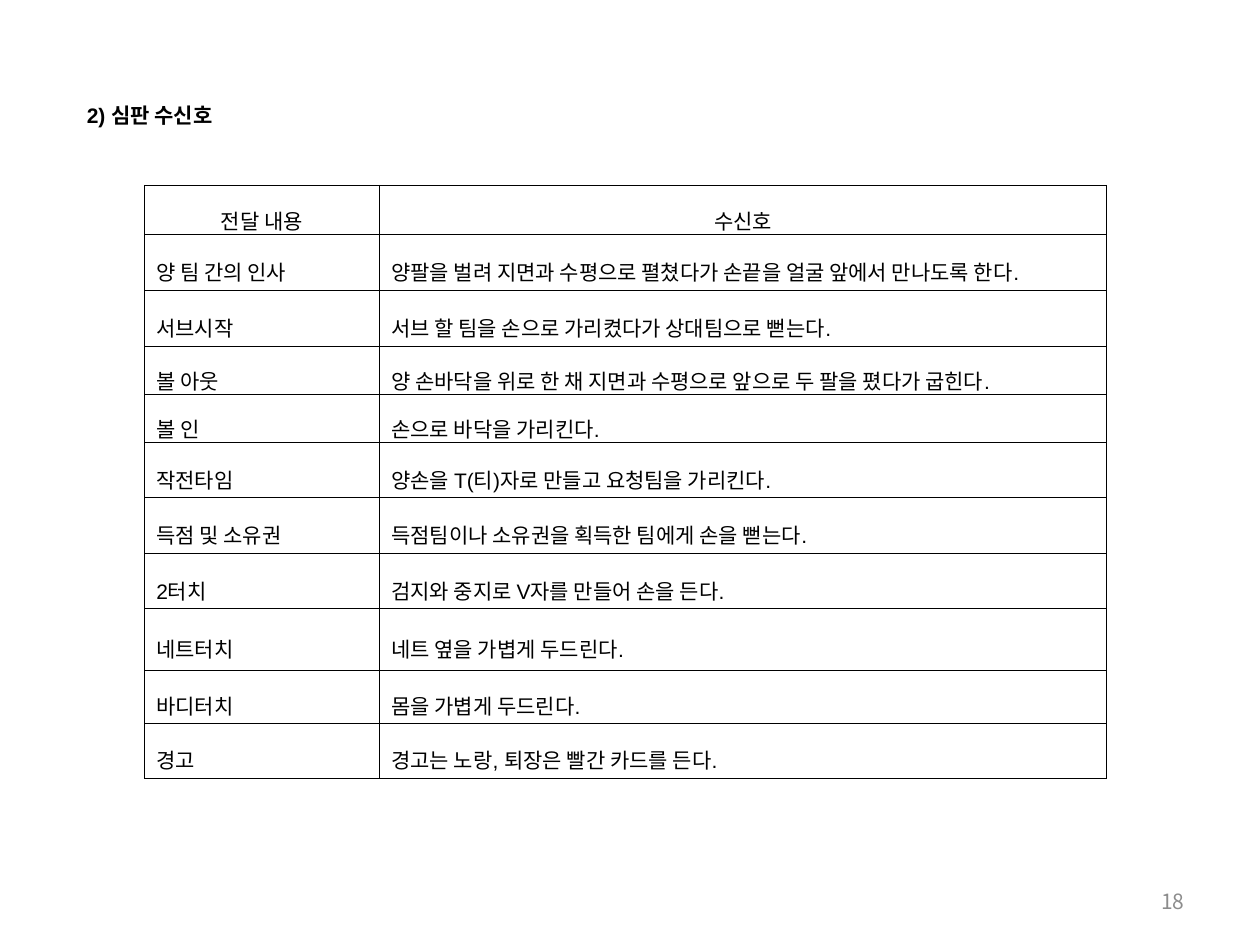
from dataclasses import dataclass

from lxml import etree
from pptx import Presentation
from pptx import util as u
from pptx.dml import color
from pptx.enum import text
from pptx.oxml import ns


@dataclass(frozen=True)
class Theme:
    """Fonts, type size, colours and line width of the slide."""
    font: str = "Arial"
    number_font: str = "Noto Sans CJK KR"
    size: int = 12
    ink: str = "000000"
    muted: str = "8C8C8C"
    border: float = 0.28
    leading: float = 1.6


THEME = Theme()
HEADER = ("전달 내용", "수신호")
SIGNALS = [
    ("양 팀 간의 인사", "양팔을 벌려 지면과 수평으로 펼쳤다가 손끝을 얼굴 앞에서 만나도록 한다.", 1.12),
    ("서브시작", "서브 할 팀을 손으로 가리켰다가 상대팀으로 뻗는다.", 1.12),
    ("볼 아웃", "양 손바닥을 위로 한 채 지면과 수평으로 앞으로 두 팔을 폈다가 굽힌다.", 0.97),
    ("볼 인", "손으로 바닥을 가리킨다.", 0.97),
    ("작전타임", "양손을 T(티)자로 만들고 요청팀을 가리킨다.", 1.12),
    ("득점 및 소유권", "득점팀이나 소유권을 획득한 팀에게 손을 뻗는다.", 1.12),
    ("2터치", "검지와 중지로 V자를 만들어 손을 든다.", 1.12),
    ("네트터치", "네트 옆을 가볍게 두드린다.", 1.24),
    ("바디터치", "몸을 가볍게 두드린다.", 1.06),
    ("경고", "경고는 노랑, 퇴장은 빨간 카드를 든다.", 1.12),
]


def add_run(p, words, font=THEME.font, ink=THEME.ink, bold=False):
    """Add one styled run to a paragraph."""
    r = p.add_run()
    r.text = words
    r.font.name, r.font.size, r.font.bold = font, u.Pt(THEME.size), bold
    r.font.color.rgb = color.RGBColor.from_string(ink)


def add_label(s, box, words, align, **style):
    """Add a one-line text box."""
    sp = s.shapes.add_textbox(*map(u.Cm, box))
    tf = sp.text_frame
    tf.word_wrap = True
    tf.vertical_anchor = text.MSO_ANCHOR.MIDDLE
    p = tf.paragraphs[0]
    p.alignment = align
    add_run(p, words, **style)


def add_borders(cell):
    """Draw a thin line on all four sides of a cell."""
    tc_pr = cell._tc.get_or_add_tcPr()
    for side in ("a:lnL", "a:lnR", "a:lnT", "a:lnB"):
        ln = etree.SubElement(tc_pr, ns.qn(side), w=str(u.Pt(THEME.border)))
        fill = etree.SubElement(ln, ns.qn("a:solidFill"))
        etree.SubElement(fill, ns.qn("a:srgbClr"), val=THEME.ink)


def fill_cell(cell, words, align, indent):
    """Put text, margins and borders into a table cell."""
    cell.margin_left, cell.margin_right = u.Cm(indent), u.Cm(0.13)
    cell.margin_top = cell.margin_bottom = u.Cm(0.03)
    cell.vertical_anchor = text.MSO_ANCHOR.MIDDLE
    add_borders(cell)
    cell.fill.background()
    p = cell.text_frame.paragraphs[0]
    p.alignment, p.line_spacing = align, THEME.leading
    add_run(p, words)


def add_signal_table(s):
    """Add the table of referee hand signals."""
    rows = [(*HEADER, 1.0), *SIGNALS]
    widths = (4.74, 14.66)
    height = sum(row[-1] for row in rows)
    frame = s.shapes.add_table(len(rows), len(widths), u.Cm(2.91), u.Cm(3.73),
                               u.Cm(sum(widths)), u.Cm(height))
    table = frame.table
    table.first_row = table.horz_banding = False
    for column, width in zip(table.columns, widths):
        column.width = u.Cm(width)
    for i, (*words, row_height) in enumerate(rows):
        table.rows[i].height = u.Cm(row_height)
        align = text.PP_ALIGN.JUSTIFY if i else text.PP_ALIGN.CENTER
        for j, word in enumerate(words):
            fill_cell(table.cell(i, j), word, align, 0.24 if i else 0.13)


def main():
    """Build and save the slide."""
    prs = Presentation()
    prs.slide_width, prs.slide_height = u.Cm(25.4), u.Cm(19.05)
    s = prs.slides.add_slide(prs.slide_layouts[6])
    add_label(s, (18.2, 17.66, 5.93, 1.01), "18", text.PP_ALIGN.RIGHT,
              font=THEME.number_font, ink=THEME.muted)
    add_label(s, (1.5, 1.93, 16.6, 0.77), "2) 심판 수신호", text.PP_ALIGN.LEFT, bold=True)
    add_signal_table(s)
    prs.save("out.pptx")


if __name__ == "__main__":
    main()
